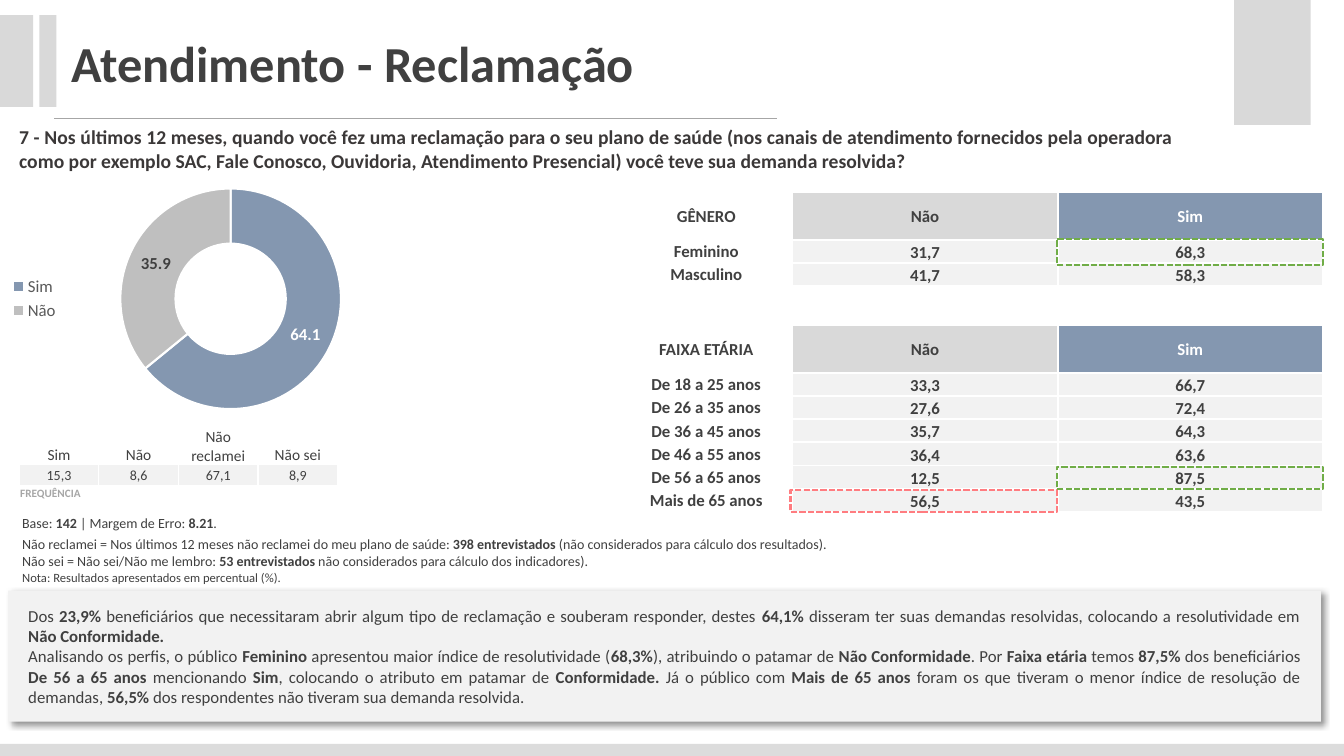
from itertools import product

from lxml import etree
from pptx import Presentation, util as u
from pptx.chart.data import CategoryChartData
from pptx.dml.color import RGBColor
from pptx.enum import chart as ch, dml, shapes, text
from pptx.oxml import parse_xml
from pptx.oxml.ns import nsdecls, qn

# Asterisks switch bold on and off.
TITLE = "*Atendimento - Reclamação"
QUESTION = (
    "*7 - Nos últimos 12 meses, quando você fez uma reclamação para o seu plano de saúde "
    "(nos canais de atendimento fornecidos pela operadora como por exemplo SAC, Fale Conosco, "
    "Ouvidoria, Atendimento Presencial) você teve sua demanda resolvida?"
)
ANSWERS = {"Sim": 64.1, "Não": 35.9}
GROUPS = [
    ("GÊNERO", "Não", "Sim"),
    ("Feminino", "31,7", "68,3"),
    ("Masculino", "41,7", "58,3"),
    ("", "", ""),
    ("FAIXA ETÁRIA", "Não", "Sim"),
    ("De 18 a 25 anos", "33,3", "66,7"),
    ("De 26 a 35 anos", "27,6", "72,4"),
    ("De 36 a 45 anos", "35,7", "64,3"),
    ("De 46 a 55 anos", "36,4", "63,6"),
    ("De 56 a 65 anos", "12,5", "87,5"),
    ("Mais de 65 anos", "56,5", "43,5"),
]
HEADS = (0, 4)
GAP = 3
FREQS = [("Sim", "Não", "Não reclamei", "Não sei"), ("15,3", "8,6", "67,1", "8,9"),
         ("*FREQUÊNCIA", "", "", "")]
NOTES = [
    "Base: *142* | Margem de Erro: *8.21*.",
    "Não reclamei = Nos últimos 12 meses não reclamei do meu plano de saúde: "
    "*398 entrevistados *(não considerados para cálculo dos resultados).\n"
    "Não sei = Não sei/Não me lembro: *53 entrevistados* não considerados para cálculo "
    "dos indicadores).",
    "Nota: Resultados apresentados em percentual (%).",
]
SUMMARY = (
    "Dos *23,9%* beneficiários que necessitaram abrir algum tipo de reclamação e souberam "
    "responder, destes *64,1%* disseram ter suas demandas resolvidas, colocando a "
    "resolutividade em *Não Conformidade.*\n"
    "Analisando os perfis, o público *Feminino* apresentou maior índice de resolutividade "
    "(*68,3%*), atribuindo o patamar de *Não Conformidade*. Por *Faixa etária *temos *87,5% *"
    "dos beneficiários* De 56 a 65 anos *mencionando *Sim*, colocando o atributo em patamar de "
    "*Conformidade. *Já o público com *Mais de 65 anos *foram os que tiveram o menor índice de "
    "resolução de demandas, *56,5%* dos respondentes não tiveram sua demanda resolvida."
)
BLOCKS = [(0, 7.38, 13.33, 0.12, "base"), (-0.01, 0.15, 0.34, 0.91, "gray"),
          (0.39, 0.15, 0.17, 0.91, "gray"), (12.24, 0, 0.76, 1.24, "gray")]
MARKS = [(7.84, 4.86, 0.22, "low"), (10.48, 4.63, 0.22, "high"), (10.48, 2.37, 0.26, "high")]


class Theme:
    font = "Calibri"
    color = dict(ink="404040", dark="3B3838", white="FFFFFF", pale="F2F2F2", gray="D9D9D9",
                 base="DCDCDC", rule="A6A6A6", blue="8497B0", ring="BFBFBF", key="595959",
                 low="FF7C80", high="70AD47")
    size = dict(title=36, ask=14, body=12, head=11, note=10, fine=9, tiny=8)


LEFT, MID, FULL = text.PP_ALIGN.LEFT, text.PP_ALIGN.CENTER, text.PP_ALIGN.JUSTIFY
TOP, CORE, LOW = text.MSO_ANCHOR.TOP, text.MSO_ANCHOR.MIDDLE, text.MSO_ANCHOR.BOTTOM


def rgb(name):
    return RGBColor.from_string(Theme.color[name])


def style(font, size, color, bold=False):
    font.name, font.size, font.bold = Theme.font, u.Pt(Theme.size[size]), bold
    font.color.rgb = rgb(color)


def write(frame, copy, size, color="ink", align=LEFT):
    for n, line in enumerate(copy.split("\n")):
        para = frame.paragraphs[0] if n == 0 else frame.add_paragraph()
        para.alignment = align
        for k, part in enumerate(line.split("*")):
            if part:
                run = para.add_run()
                run.text = part
                style(run.font, size, color, k % 2 == 1)
        if not line:
            end = etree.SubElement(para._p, qn("a:endParaRPr"))
            end.set("sz", str(Theme.size[size] * 100))


def inset(part, x, y, base=None):
    part.margin_left = part.margin_right = u.Inches(x)
    part.margin_top = u.Inches(y)
    part.margin_bottom = u.Inches(y if base is None else base)


def box(slide, place, copy, size, color, align, pads):
    frame = slide.shapes.add_textbox(*map(u.Inches, place)).text_frame
    frame.word_wrap = True
    inset(frame, *pads)
    write(frame, copy, size, color, align)


def rect(slide, place, fill=None):
    shape = slide.shapes.add_shape(shapes.MSO_SHAPE.RECTANGLE, *map(u.Inches, place))
    shape.shadow.inherit = False
    shape.line.fill.background()
    if fill:
        shape.fill.solid()
        shape.fill.fore_color.rgb = rgb(fill)
    else:
        shape.fill.background()
    return shape


def grid(slide, x, y, cols, rows):
    table = slide.shapes.add_table(len(rows), len(cols), u.Inches(x), u.Inches(y),
                                   u.Inches(sum(cols)), u.Inches(sum(rows))).table
    table.first_row = table.horz_banding = False
    for col, width in zip(table.columns, cols):
        col.width = u.Inches(width)
    for row, height in zip(table.rows, rows):
        row.height = u.Inches(height)
    return table


def fill_cell(cell, copy, size, color="ink", align=MID, anchor=CORE, fill=None, edge=1):
    inset(cell, 0.01, 0.01, 0)
    cell.vertical_anchor = anchor
    write(cell.text_frame, copy, size, color, align)
    props = cell._tc.get_or_add_tcPr()
    for side in "LRTB":
        props.append(parse_xml(
            f'<a:ln{side} {nsdecls("a")} w="{u.Pt(edge)}"><a:solidFill>'
            f'<a:srgbClr val="{Theme.color["white"]}"/></a:solidFill></a:ln{side}>'))
    if fill:
        cell.fill.solid()
        cell.fill.fore_color.rgb = rgb(fill)
    else:
        cell.fill.background()


def add_groups(slide):
    rows = [0.47 if r in HEADS else 0.39 if r == GAP else 0.23 for r in range(len(GROUPS))]
    table = grid(slide, 6.15, 1.91, (1.71, 2.63, 2.63), rows)
    for r, c in product(range(len(rows)), range(3)):
        color, anchor, fill = "ink", CORE, None
        if c and r in HEADS:
            color, fill = ("ink", "gray") if c == 1 else ("white", "blue")
        elif c and r != GAP:
            anchor, fill = LOW, "pale"
        copy = GROUPS[r][c] and "*" + GROUPS[r][c]
        fill_cell(table.cell(r, c), copy, "body", color, MID, anchor, fill, 1.5)


def add_freqs(slide):
    table = grid(slide, 0.19, 4.23, [0.79] * 4, (0.38, 0.21, 0.21))
    looks = [("head", "ink", MID, LOW), ("note", "ink", MID, CORE, "pale"),
             ("tiny", "rule", LEFT, TOP)]
    for r, c in product(range(3), range(4)):
        fill_cell(table.cell(r, c), FREQS[r][c], *looks[r])
    table.cell(2, 0).merge(table.cell(2, 2))


def add_notes(slide):
    table = grid(slide, 0.21, 5.1, (4.06, 4.06), (0.21, 0.34, 0.21))
    for r, (copy, size) in enumerate(zip(NOTES, ("note", "note", "fine"))):
        fill_cell(table.cell(r, 0), copy, size, align=LEFT, anchor=TOP)
        fill_cell(table.cell(r, 1), "", size)
        if size == "note":
            table.cell(r, 0).merge(table.cell(r, 1))


def add_ring(slide):
    data = CategoryChartData(number_format="0.0")
    data.categories = list(ANSWERS)
    data.add_series("Series 1", list(ANSWERS.values()))
    chart = slide.shapes.add_chart(ch.XL_CHART_TYPE.DOUGHNUT, *map(u.Inches, (0, 1.72, 3.98, 2.49)),
                                   data).chart
    style(chart.font, "note", "ink")
    chart.has_title = False
    chart.has_legend = True
    chart.legend.position = ch.XL_LEGEND_POSITION.LEFT
    chart.legend.include_in_layout = False
    style(chart.legend.font, "body", "key")
    plot = chart.plots[0]
    plot.vary_by_categories = True
    series = plot.series[0]
    labels = series.data_labels
    labels.show_value, labels.show_percentage = True, False
    labels.number_format, labels.number_format_is_linked = "0.0", False
    style(labels.font, "body", "white", True)
    style(series.points[1].data_label.font, "body", "ink", True)
    for n, color in enumerate(("blue", "ring")):
        look = series.points[n].format
        look.fill.solid()
        look.fill.fore_color.rgb = rgb(color)
        look.line.color.rgb = rgb("white")
        look.line.width = u.Pt(1.5)
    plot._element.find(qn("c:holeSize")).set("val", "50")
    area = chart._chartSpace.chart.plotArea
    for old in area.findall(qn("c:layout")):
        area.remove(old)
    spots = "".join(f'<c:{k} val="{v}"/>' for k, v in
                    dict(xMode="edge", yMode="edge", x=0.3, y=0.06, w=0.55, h=0.88).items())
    area.insert(0, parse_xml(f'<c:layout {nsdecls("c")}><c:manualLayout>'
                             f'<c:layoutTarget val="inner"/>{spots}</c:manualLayout></c:layout>'))


def add_summary(slide):
    panel = rect(slide, (0.08, 5.86, 13.02, 1.3), "pale")
    panel._element.spPr.find(qn("a:effectLst")).append(parse_xml(
        f'<a:outerShdw {nsdecls("a")} blurRad="{u.Pt(4)}" dist="{u.Pt(3)}" dir="2700000" '
        'algn="tl" rotWithShape="0"><a:srgbClr val="000000"><a:alpha val="40000"/>'
        '</a:srgbClr></a:outerShdw>'))
    frame = panel.text_frame
    frame.word_wrap, frame.vertical_anchor = True, CORE
    inset(frame, 0.2, 0.04)
    write(frame, SUMMARY, "body", align=FULL)


def main():
    deck = Presentation()
    deck.slide_width, deck.slide_height = u.Inches(13.33), u.Inches(7.5)
    slide = deck.slides.add_slide(deck.slide_layouts[6])
    for *place, fill in BLOCKS:
        rect(slide, place, fill)
    rule = slide.shapes.add_connector(shapes.MSO_CONNECTOR.STRAIGHT,
                                      *map(u.Inches, (0.54, 1.17, 7.71, 1.17)))
    rule.line.color.rgb, rule.line.width = rgb("rule"), u.Pt(0.5)
    etree.SubElement(rule._element.spPr, qn("a:effectLst"))
    add_groups(slide)
    box(slide, (0.08, 1.18, 11.67, 0.58), QUESTION, "ask", "dark", FULL, (0.11, 0.06))
    add_notes(slide)
    add_freqs(slide)
    box(slide, (0.61, 0.27, 5.84, 0.71), TITLE, "title", "ink", LEFT, (0.1, 0.05))
    add_summary(slide)
    for x, y, height, color in MARKS:
        line = rect(slide, (x, y, 2.64, height)).line
        line.color.rgb, line.width = rgb(color), u.Pt(1.5)
        line.dash_style = dml.MSO_LINE.SQUARE_DOT
    add_ring(slide)
    deck.save("out.pptx")


if __name__ == "__main__":
    main()
